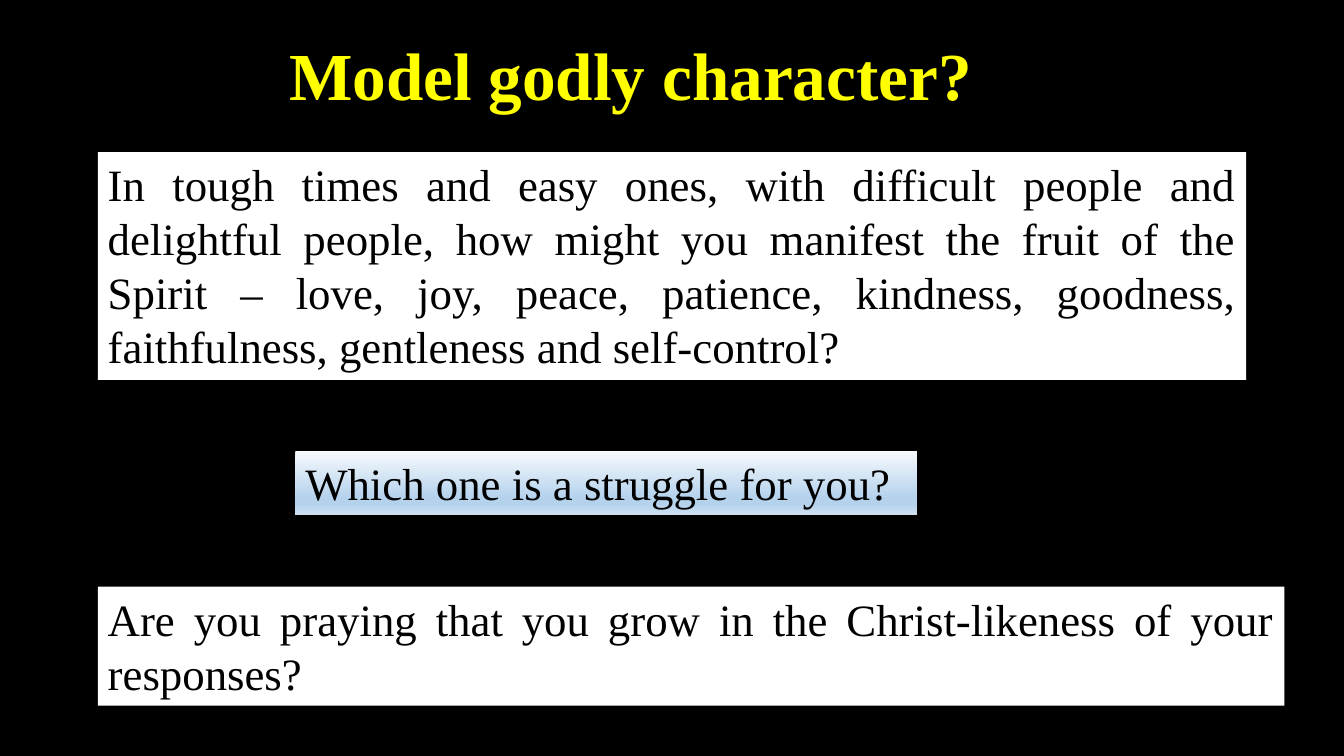
from dataclasses import dataclass

from lxml import etree
from pptx import Presentation
from pptx.dml.color import RGBColor
from pptx.enum.text import MSO_AUTO_SIZE, PP_ALIGN
from pptx.oxml.ns import qn
from pptx.util import Inches, Pt

LEFT, JUSTIFY = PP_ALIGN.LEFT, PP_ALIGN.JUSTIFY
GROW = MSO_AUTO_SIZE.SHAPE_TO_FIT_TEXT


@dataclass(frozen=True)
class Theme:
    font: str = "Times New Roman"
    title_size: int = 48
    body_size: int = 32
    black: str = "000000"
    white: str = "FFFFFF"
    yellow: str = "FFFF00"
    blue_fade: tuple = ((0, "F7FAFD"), (74, "B5D2EC"), (83, "B5D2EC"), (100, "CEE1F2"))


THEME = Theme()
MARGIN = 0.97

# text, (left, top, width, height) in inches, format
TEXT_BOXES = [
    ("Model godly character?", (2.77, 0.28, 7.04, 0.91),
     dict(size=THEME.title_size, color=THEME.yellow, fill=THEME.black, bold=True)),
    ("In tough times and easy ones, with difficult people and delightful people, "
     "how might you manifest the fruit of the Spirit – love, joy, peace, patience, "
     "kindness, goodness, faithfulness, gentleness and self-control?",
     (MARGIN, 1.51, 11.39, 2.26), dict(align=JUSTIFY)),
    ("Which one is a struggle for you?", (2.93, 4.47, 6.17, 0.64),
     dict(fill=THEME.blue_fade)),
    ("Are you praying that you grow in the Christ-likeness of your responses?",
     (MARGIN, 5.82, 11.77, 1.18), dict(align=JUSTIFY)),
]


def fill_solid(fill, color):
    fill.solid()
    fill.fore_color.rgb = RGBColor.from_string(color)


def fill_fade(shape, stops):
    """Fill with a top-to-bottom gradient of (percent, colour) stops."""
    shape.fill.gradient()
    shape.fill.gradient_angle = 270
    stop_list = shape.element.spPr.find(qn("a:gradFill")).find(qn("a:gsLst"))
    for default_stop in list(stop_list):
        stop_list.remove(default_stop)
    for percent, color in stops:
        stop = etree.SubElement(stop_list, qn("a:gs"), pos=str(percent * 1000))
        etree.SubElement(stop, qn("a:srgbClr"), val=color)


def add_text(slide, text, box, *, size=THEME.body_size, color=THEME.black,
             fill=THEME.white, bold=False, align=LEFT):
    shape = slide.shapes.add_textbox(*map(Inches, box))
    if isinstance(fill, str):
        fill_solid(shape.fill, fill)
    else:
        fill_fade(shape, fill)
    frame = shape.text_frame
    frame.word_wrap = True
    frame.auto_size = GROW
    paragraph = frame.paragraphs[0]
    paragraph.alignment = align
    run = paragraph.add_run()
    run.text = text
    run.font.name = THEME.font
    run.font.size = Pt(size)
    run.font.bold = bold
    run.font.color.rgb = RGBColor.from_string(color)


def main():
    presentation = Presentation()
    presentation.slide_width = Inches(13.33)
    presentation.slide_height = Inches(7.5)
    slide = presentation.slides.add_slide(presentation.slide_layouts[6])
    fill_solid(slide.background.fill, THEME.black)
    for text, box, text_format in TEXT_BOXES:
        add_text(slide, text, box, **text_format)
    presentation.save("out.pptx")


if __name__ == "__main__":
    main()
